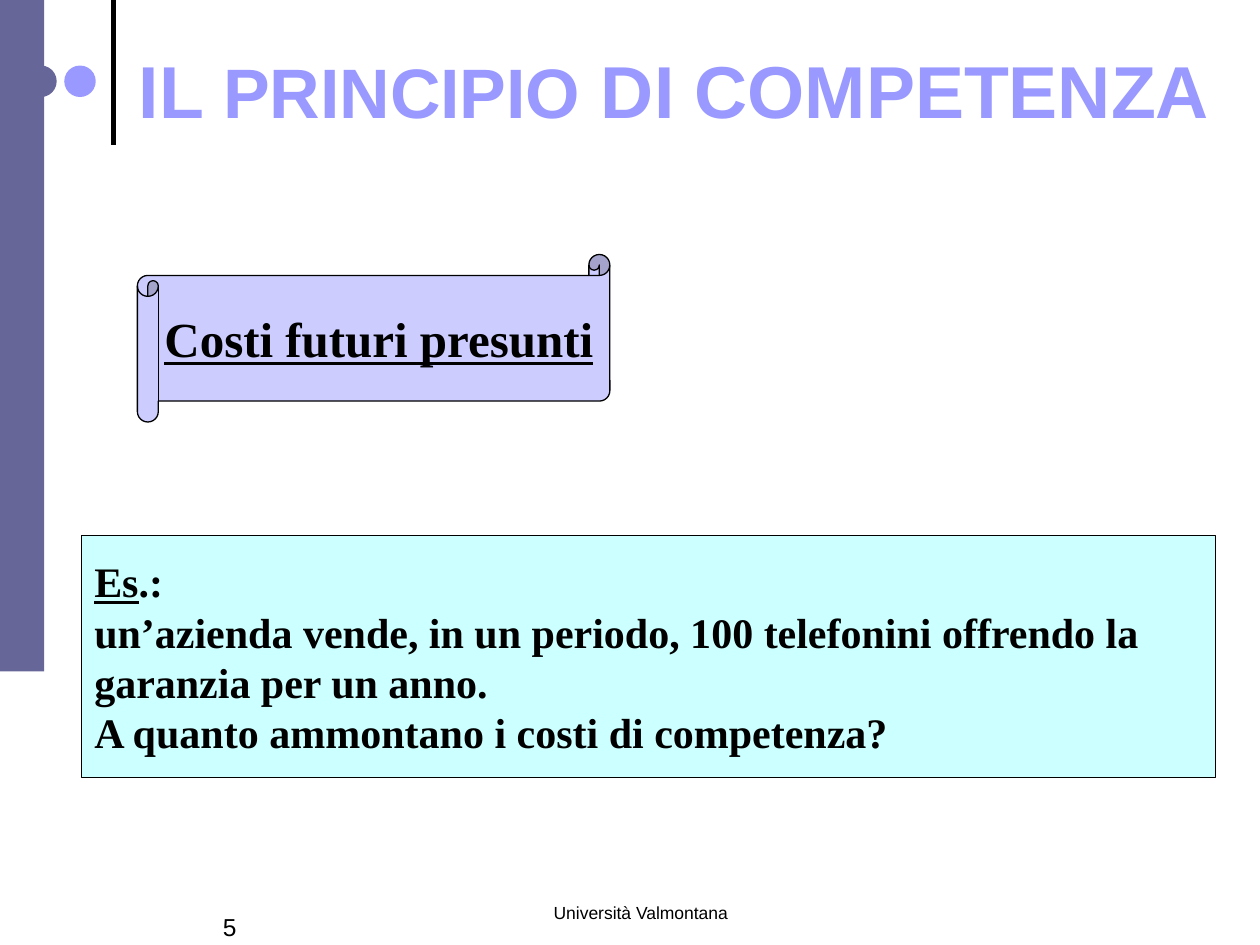
from pptx import Presentation
from pptx.dml.color import RGBColor
from pptx.enum.shapes import MSO_CONNECTOR, MSO_SHAPE as Shape
from pptx.enum.text import MSO_ANCHOR as Anchor, PP_ALIGN as Align
from pptx.oxml.ns import qn
from pptx.util import Pt
from lxml.etree import SubElement

BLACK, SLATE, PERIWINKLE, LAVENDER, AQUA = "000000", "666699", "9999FF", "CCCCFF", "CCFFFF"


def colour(hex_text):
    return RGBColor.from_string(hex_text)


def add_block(page, kind, box, fill, line=None):
    block = page.shapes.add_shape(kind, *map(Pt, box))
    block.shadow.inherit = False
    block.fill.solid()
    block.fill.fore_color.rgb = colour(fill)
    if line:
        block.line.color.rgb = colour(line)
        block.line.width = Pt(0.75)
    else:
        block.line.fill.background()
    return block


def write(shape, paragraphs, style, align=Align.LEFT, anchor=Anchor.TOP, wrap=True):
    """Fill a shape with paragraphs, each a list of (text, changes to style)."""
    frame = shape.text_frame
    frame.word_wrap = wrap
    frame.vertical_anchor = anchor
    for index, spans in enumerate(paragraphs):
        para = frame.paragraphs[0] if index == 0 else frame.add_paragraph()
        para.alignment = align
        for text, changes in spans:
            span = para.add_run()
            span.text = text
            values = {**style, **changes}
            span.font.color.rgb = colour(values.pop("color"))
            for name, value in values.items():
                setattr(span.font, name, value)


def add_text(page, box, spans, style, **layout):
    label = page.shapes.add_textbox(*map(Pt, box))
    write(label, [spans], style, **layout)
    return label


def add_decoration(page, left, top, width, height):
    add_rule(page, left + 64.8, top, 82.8)
    for offset, fill in ((14.4, SLATE), (36.72, PERIWINKLE)):
        add_block(page, Shape.OVAL, (left + offset, top + 37.44, 18, 18), fill)
    add_block(page, Shape.RECTANGLE, (left, top, width, height), SLATE)


def add_rule(page, x, top, length):
    rule = page.shapes.add_connector(MSO_CONNECTOR.STRAIGHT, Pt(x), Pt(top + length), Pt(x), Pt(top))
    rule.line.color.rgb = colour(BLACK)
    rule.line.width = Pt(3)
    SubElement(rule._element.spPr, qn("a:effectLst"))


def add_footer(page, left, top):
    style = {"name": "Arial", "size": Pt(10), "color": BLACK}
    add_text(page, (left + 131.76, top, 228.24, 36), [("Università Valmontana", {})],
             style, align=Align.CENTER)
    add_text(page, (left, top + 5.76, 102.24, 36), [("5", {"size": Pt(14)})], style)


def add_title(page, box):
    style = {"name": "Arial", "size": Pt(42), "bold": True, "color": PERIWINKLE}
    spans = [("IL ", {}), ("PRINCIPIO", {"size": Pt(40)}), (" DI COMPETENZA", {})]
    title = add_text(page, box, spans, style, align=Align.CENTER, anchor=Anchor.MIDDLE)
    title.text_frame.margin_bottom = Pt(52)


def add_scroll(page, box):
    style = {"name": "Times New Roman", "size": Pt(28), "bold": True,
             "underline": True, "color": BLACK}
    scroll = add_block(page, Shape.HORIZONTAL_SCROLL, box, LAVENDER, BLACK)
    write(scroll, [[("Costi futuri presunti", {})]], style,
          align=Align.CENTER, anchor=Anchor.MIDDLE, wrap=False)


def add_example(page, box):
    style = {"name": "Times New Roman", "size": Pt(24), "bold": True, "color": BLACK}
    lines = [
        [("Es", {"underline": True}), (".:", {})],
        [("un’azienda vende, in un periodo, 100 telefonini offrendo la", {})],
        [("garanzia per un anno.", {})],
        [("A quanto ammontano i costi di competenza?", {})],
    ]
    panel = add_block(page, Shape.RECTANGLE, box, AQUA, BLACK)
    write(panel, lines, style, anchor=Anchor.MIDDLE)


def main():
    deck = Presentation()
    deck.slide_width, deck.slide_height = Pt(720), Pt(540)
    page = deck.slides.add_slide(deck.slide_layouts[6])
    add_decoration(page, 0, 0, 25.2, 383.76)
    add_footer(page, 120.24, 511.92)
    add_title(page, (64.8, 15.12, 640.8, 120.24))
    add_scroll(page, (78.48, 145.44, 270, 95.76))
    add_example(page, (46.8, 306, 648, 138.24))
    deck.save("out.pptx")


if __name__ == "__main__":
    main()
